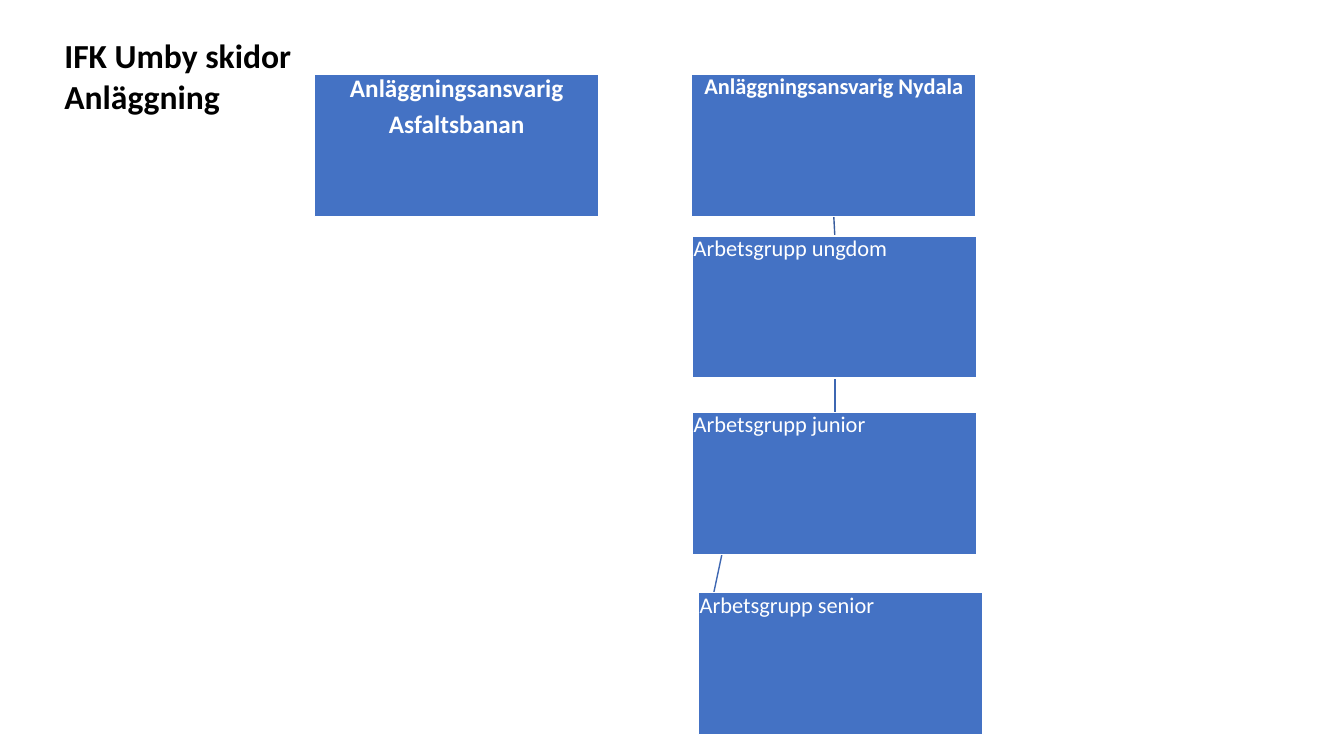
from lxml import etree
from pptx import Presentation
from pptx.dml.color import RGBColor
from pptx.enum.shapes import MSO_CONNECTOR as Connector, MSO_SHAPE as Shape
from pptx.enum.text import MSO_ANCHOR as Anchor, MSO_AUTO_SIZE as AutoSize, PP_ALIGN as Align
from pptx.oxml.ns import qn
from pptx.util import Inches, Pt

BOX_WIDTH, BOX_HEIGHT = 2.82, 1.41
TOP, LEFT, BOTTOM = 0, 1, 2


def color(value):
    return RGBColor.from_string(value)


def write(frame, text, size=16, ink="FFFFFF", bold=False, align=Align.LEFT, line=1.0, after=0):
    frame.word_wrap = True
    frame.vertical_anchor = Anchor.TOP
    for index, words in enumerate(text.split("\n")):
        para = frame.paragraphs[0] if index == 0 else frame.add_paragraph()
        para.alignment = align
        para.line_spacing = line
        para.space_after = Pt(after)
        span = para.add_run()
        span.text = words
        span.font.name = "Calibri"
        span.font.size = Pt(size)
        span.font.bold = bold
        span.font.color.rgb = color(ink)


def add_box(page, left, top, text, size=16, **style):
    box = page.shapes.add_shape(Shape.RECTANGLE, Inches(left), Inches(top),
                                Inches(BOX_WIDTH), Inches(BOX_HEIGHT))
    box.shadow.inherit = False
    box.fill.solid()
    box.fill.fore_color.rgb = color("4472C4")
    box.line.color.rgb = color("FFFFFF")
    box.line.width = Pt(1)
    frame = box.text_frame
    frame.margin_left = frame.margin_right = Inches(0.01)
    frame.margin_top = frame.margin_bottom = Inches(0.01)
    write(frame, text, size=size, line=0.9, after=0.35 * size, **style)
    return box


def add_link(page, start, end, ink="3E67B2"):
    link = page.shapes.add_connector(Connector.STRAIGHT, *map(Inches, start + end))
    link.line.color.rgb = color(ink)
    link.line.width = Pt(1)
    etree.SubElement(link.element.spPr, qn("a:effectLst"))
    return link


def add_title(page, text):
    title = page.shapes.add_textbox(Inches(0.54), Inches(0.3), Inches(2.89), Inches(0.91))
    write(title.text_frame, text, size=24, ink="000000", bold=True)
    title.text_frame.auto_size = AutoSize.SHAPE_TO_FIT_TEXT


def main():
    deck = Presentation()
    deck.slide_width, deck.slide_height = Inches(13.33), Inches(7.5)
    page = deck.slides.add_slide(deck.slide_layouts[6])

    senior_link = add_link(page, (7.16, 5.5), (6.93, 6.59))
    junior_link = add_link(page, (8.28, 3.75), (8.28, 4.09))
    youth_link = add_link(page, (8.27, 2.15), (8.28, 2.34), ink="365B9D")

    heading = {"bold": True, "align": Align.CENTER}
    add_box(page, 3.12, 0.74, "Anläggningsansvarig\nAsfaltsbanan", size=18, **heading)
    manager = add_box(page, 6.86, 0.74, "Anläggningsansvarig Nydala", **heading)
    youth = add_box(page, 6.87, 2.34, "Arbetsgrupp ungdom")
    junior = add_box(page, 6.87, 4.09, "Arbetsgrupp junior")
    senior = add_box(page, 6.93, 5.88, "Arbetsgrupp senior")

    for link, upper, lower in ((youth_link, manager, youth), (junior_link, youth, junior)):
        link.begin_connect(upper, BOTTOM)
        link.end_connect(lower, TOP)
    senior_link.end_connect(senior, LEFT)

    add_title(page, "IFK Umby skidor\nAnläggning")
    deck.save("out.pptx")


if __name__ == "__main__":
    main()
